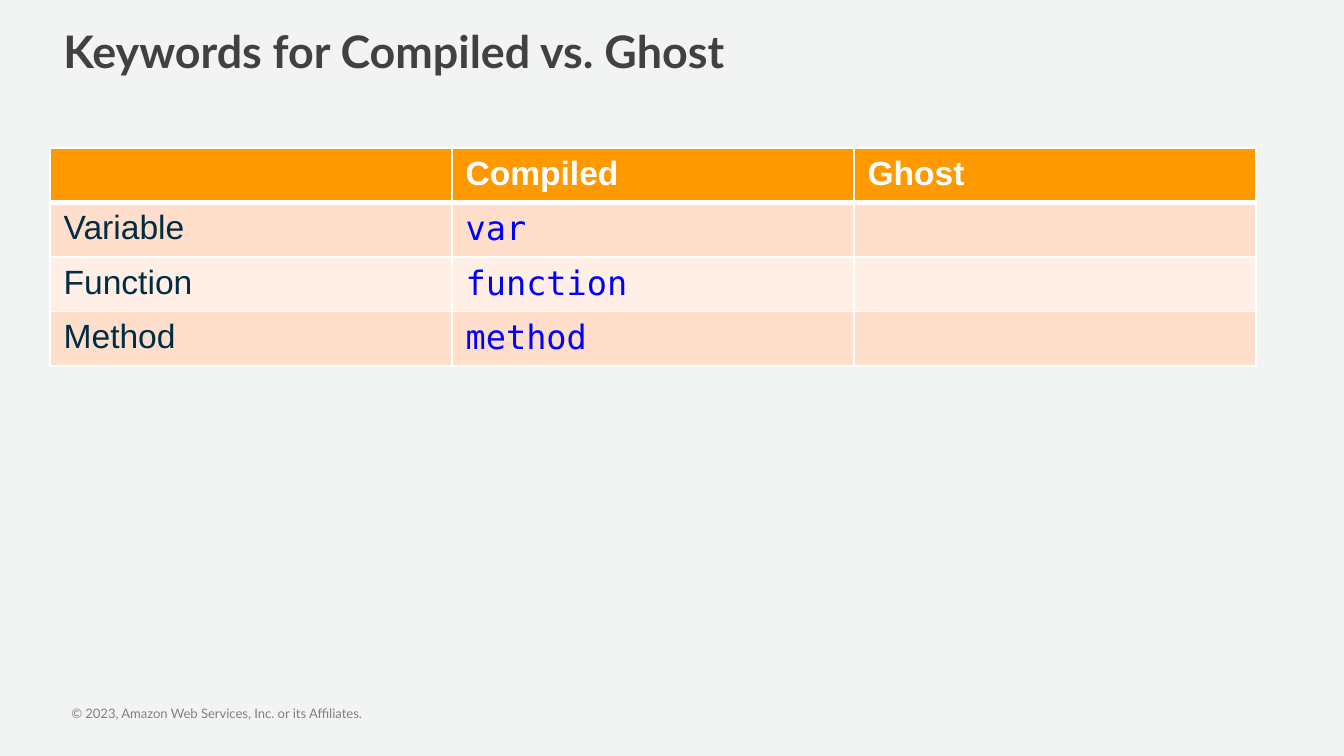
import pptx
import pptx.util
import pptx.dml.color
import pptx.oxml
import pptx.oxml.ns

Pt = pptx.util.Pt


def color(code):
    return pptx.dml.color.RGBColor.from_string(code)


def write(frame, text, font="Arial", size=18, ink="002D43", bold=False):
    run = frame.paragraphs[0].add_run()
    run.text = text
    run.font.name = font
    run.font.size = Pt(size)
    run.font.bold = bold
    run.font.color.rgb = color(ink)


deck = pptx.Presentation()
deck.slide_width, deck.slide_height = Pt(720), Pt(405)
slide = deck.slides.add_slide(deck.slide_layouts[6])
slide.background.fill.solid()
slide.background.fill.fore_color.rgb = color("F2F4F4")

# Footer
foot = slide.shapes.add_textbox(Pt(38.2), Pt(378), Pt(350), Pt(8.6)).text_frame
foot.margin_left = foot.margin_right = foot.margin_top = foot.margin_bottom = 0
foot.word_wrap = True
write(foot, "© 2023, Amazon Web Services, Inc. or its Affiliates.",
      font="Lato", size=7, ink="808080")

# Title
title = slide.shapes.add_textbox(Pt(26.9), Pt(9.4), Pt(646), Pt(43)).text_frame
title.word_wrap = True
write(title, "Keywords for Compiled vs. Ghost",
      font="Lato", size=24, ink="414042", bold=True)

# Keyword table
rows = [
    ("", "Compiled", "Ghost"),
    ("Variable", "var", ""),
    ("Function", "function", ""),
    ("Method", "method", ""),
]
fills = ["FF9900", "FFDECC", "FFEFE7", "FFDECC"]
head = dict(ink="FFFFFF", bold=True)
code = dict(font="DejaVu Sans Mono", ink="0000FF")
table = slide.shapes.add_table(
    4, 3, Pt(26.9), Pt(79.4), Pt(646), Pt(116.8)).table

for r, row in enumerate(rows):
    for c, text in enumerate(row):
        cell = table.cell(r, c)
        cell.fill.solid()
        cell.fill.fore_color.rgb = color(fills[r])
        if text:
            style = head if r == 0 else code if c == 1 else {}
            write(cell.text_frame, text, **style)

        # White borders, thicker under the header
        props = cell._tc.get_or_add_tcPr()
        for i, side in enumerate("LRTB"):
            thick = (r, side) in [(0, "B"), (1, "T")]
            line = pptx.oxml.parse_xml(
                f'<a:ln{side} {pptx.oxml.ns.nsdecls("a")} w="{Pt(3 if thick else 1)}">'
                '<a:solidFill><a:srgbClr val="FFFFFF"/></a:solidFill>'
                f'</a:ln{side}>')
            props.insert(i, line)

deck.save("out.pptx")
